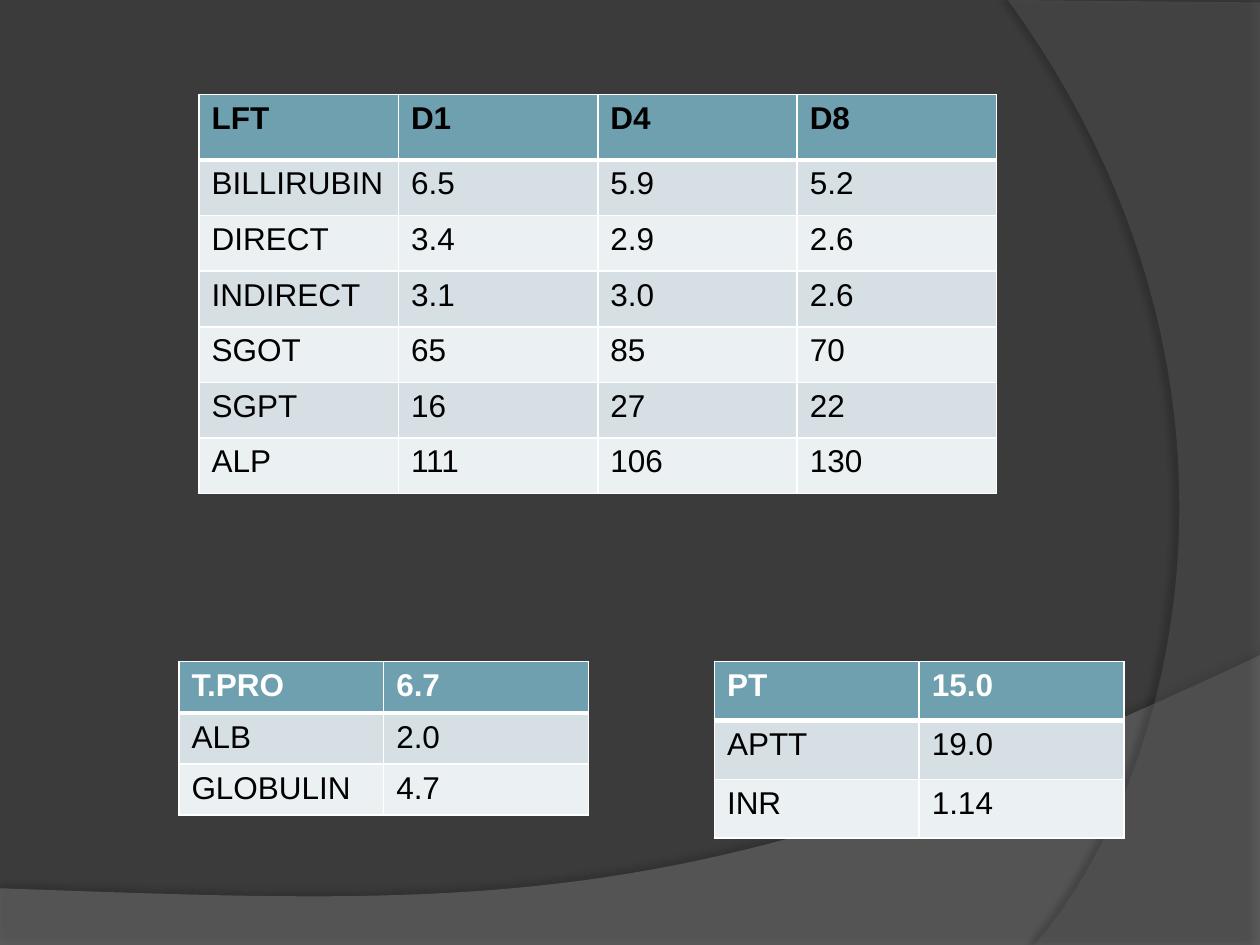
from lxml import etree
from pptx import Presentation, util as u
from pptx.dml.color import RGBColor
from pptx.oxml import ns

W, H = 10, 7.5
WHITE, BLACK, HEADER = "FFFFFF", "000000", "6EA0B0"
BANDS = ("EBF0F2", "D5DFE4")


def rgb(value):
    return RGBColor.from_string(value)


def add_xml(parent, tag, **attrs):
    return etree.SubElement(parent, ns.qn(tag), {k: str(v) for k, v in attrs.items()})


def add_color(parent, color, alpha=100):
    clr = add_xml(parent, "a:srgbClr", val=color)
    if alpha < 100:
        add_xml(clr, "a:alpha", val=alpha * 1000)


def write(tf, text, size=18, color=BLACK, bold=False, font="Arial"):
    r = tf.paragraphs[0].add_run()
    r.text = text
    r.font.size, r.font.bold, r.font.name = u.Pt(size), bold, font
    r.font.color.rgb = rgb(color)


def curve(p0, p1, p2, p3, steps=48):
    weights = [((1 - t) ** 3, 3 * t * (1 - t) ** 2, 3 * t * t * (1 - t), t ** 3)
               for t in (i / steps for i in range(1, steps + 1))]
    return [tuple(sum(w * p[axis] for w, p in zip(ws, (p0, p1, p2, p3)))
                  for axis in (0, 1)) for ws in weights]


def add_swoosh(s, points, color, alpha, shadow_alpha, distance, blur, angle):
    emu = [(u.Inches(x), u.Inches(y)) for x, y in points]
    builder = s.shapes.build_freeform(*emu[0], scale=1.0)
    builder.add_line_segments(emu[1:], close=True)
    sp = builder.convert_to_shape()
    sp.fill.solid()
    sp.fill.fore_color.rgb = rgb(color)
    clr = sp.fill._xPr.find(".//" + ns.qn("a:srgbClr"))
    add_xml(clr, "a:alpha", val=alpha * 1000)
    sp.line.fill.background()
    effects = add_xml(sp._element.spPr, "a:effectLst")
    shadow = add_xml(effects, "a:outerShdw", blurRad=u.Pt(blur), dist=u.Pt(distance),
                     dir=angle * 60000, algn="ctr", rotWithShape=0)
    add_color(shadow, BLACK, shadow_alpha)


def add_background(s):
    s.background.fill.solid()
    s.background.fill.fore_color.rgb = rgb("3B3B3B")
    wave = [(0, 7.05), (0, H), (W, H), (W, 5.2)]
    wave += curve(wave[-1], (5.59, 7.29), (3.91, 7.19), wave[0])
    add_swoosh(s, wave, "7F7F7F", 45, 35, 3.5, 4, 270)
    arc = [(W, 0.02), (W, H), (8.21, H)]
    arc += curve(arc[-1], (9.35, 6.19), (10.18, 3), (8, 0))
    add_swoosh(s, arc, "5E5E5E", 40, 45, 4, 4, 180)


def set_borders(cell, **widths):
    tcPr = cell._tc.get_or_add_tcPr()
    for side in "LRTB":
        ln = add_xml(tcPr, "a:ln" + side, w=u.Pt(widths.get(side, 1)))
        add_color(add_xml(ln, "a:solidFill"), WHITE)


def add_results(s, box, rows, header_height, header_color=WHITE):
    x, y, w, h = (u.Inches(v) for v in box)
    n_rows, n_cols = len(rows), len(rows[0])
    table = s.shapes.add_table(n_rows, n_cols, x, y, w, h).table
    first = u.Inches(header_height)
    for i, row in enumerate(table.rows):
        row.height = first if i == 0 else (h - first) // (n_rows - 1)
    for i, values in enumerate(rows):
        widths = {0: {"B": 3}, 1: {"T": 3}}.get(i, {})
        for j, value in enumerate(values):
            cell = table.cell(i, j)
            set_borders(cell, **widths)
            cell.fill.solid()
            cell.fill.fore_color.rgb = rgb(BANDS[i % 2] if i else HEADER)
            write(cell.text_frame, value, bold=i == 0,
                  color=BLACK if i else header_color)


def main():
    prs = Presentation()
    prs.slide_width, prs.slide_height = u.Inches(W), u.Inches(H)
    s = prs.slides.add_slide(prs.slide_layouts[6])
    add_background(s)
    liver = [
        ("LFT", "D1", "D4", "D8"),
        ("BILLIRUBIN", "6.5", "5.9", "5.2"),
        ("DIRECT", "3.4", "2.9", "2.6"),
        ("INDIRECT", "3.1", "3.0", "2.6"),
        ("SGOT", "65", "85", "70"),
        ("SGPT", "16", "27", "22"),
        ("ALP", "111", "106", "130"),
    ]
    proteins = [("T.PRO", "6.7"), ("ALB", "2.0"), ("GLOBULIN", "4.7")]
    clotting = [("PT", "15.0"), ("APTT", "19.0"), ("INR", "1.14")]
    add_results(s, (1.58, 0.75, 6.33, 3.17), liver, 0.52, BLACK)
    add_results(s, (1.42, 5.25, 3.25, 1.22), proteins, 0.41)
    add_results(s, (5.67, 5.25, 3.25, 1.4), clotting, 0.47)
    prs.save("out.pptx")


if __name__ == "__main__":
    main()
